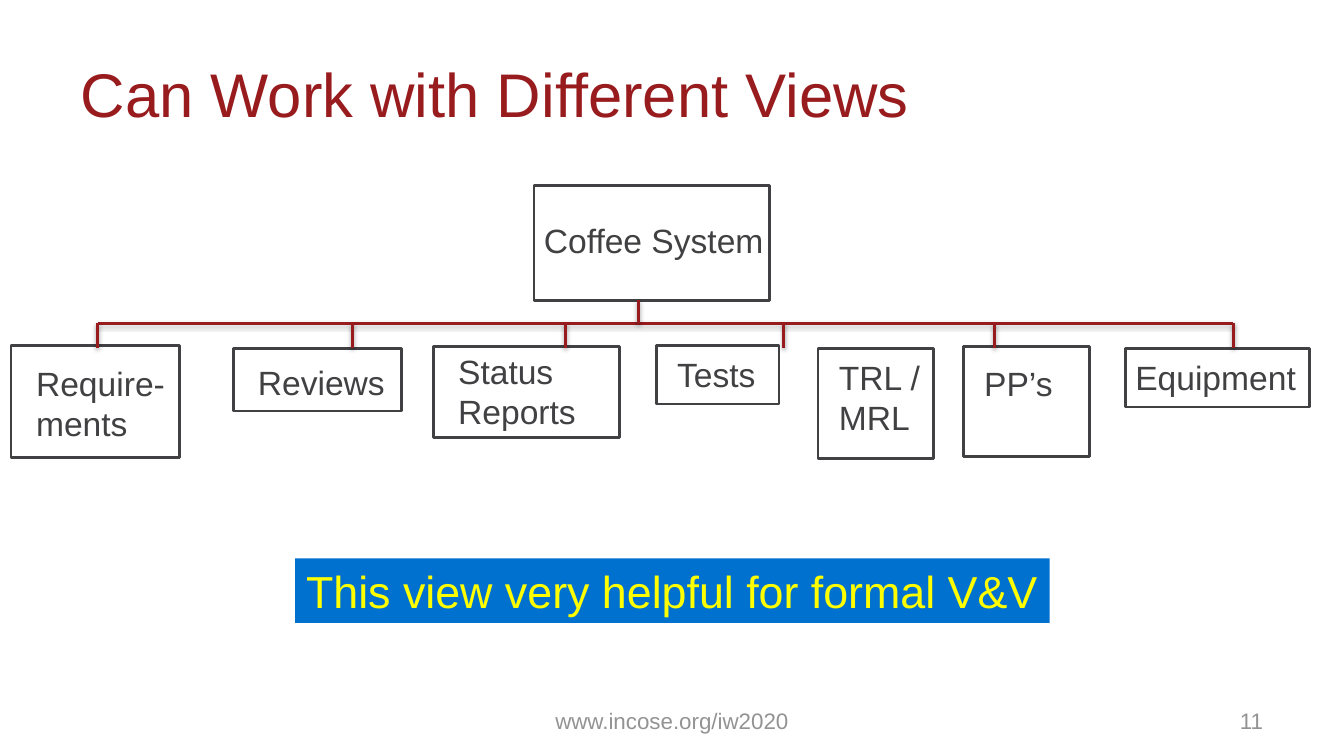
from dataclasses import dataclass

from lxml import etree
from pptx import Presentation
from pptx.dml.color import RGBColor
from pptx.enum.shapes import MSO_CONNECTOR, MSO_SHAPE
from pptx.enum.text import MSO_ANCHOR, MSO_AUTO_SIZE, PP_ALIGN
from pptx.oxml.ns import qn
from pptx.util import Cm, Pt

LEFT, CENTER, RIGHT = PP_ALIGN.LEFT, PP_ALIGN.CENTER, PP_ALIGN.RIGHT
TOP, MIDDLE = MSO_ANCHOR.TOP, MSO_ANCHOR.MIDDLE
RECT, STRAIGHT = MSO_SHAPE.RECTANGLE, MSO_CONNECTOR.STRAIGHT


@dataclass(frozen=True)
class Theme:
    font: str = "Arial"
    red: str = "981B1E"
    ink: str = "414042"
    gray: str = "939393"
    blue: str = "0071CE"
    yellow: str = "FFFF00"
    title: int = 44
    banner: int = 32
    body: int = 24
    foot: int = 16
    line: int = 2


THEME = Theme()
INSET = (0.25, 0.13)
WIDE_INSET = (0.34, 0.17)

# Label, box (x, y, w, h), text (dx, dy, w), lines of text, stem x
BRANCHES = [
    ("Require- ments", (0, 4.04, 4.24, 2.82), (0.38, 0.3, 3.89), 2, 2.18),
    ("Reviews", (5.61, 4.12, 4.24, 1.57), (0.36, 0.2, 5.59), 1, 8.61),
    ("Status Reports", (10.64, 4.07, 4.7, 2.29), (0.38, -0.03, 3.53), 2, 13.97),
    ("Tests", (16.26, 4.04, 3.1, 1.47), (0.28, 0.08, 2.51), 1, 19.48),
    ("TRL / MRL", (20.34, 4.12, 2.92, 2.77), (0.28, 0.07, 2.82), 2, None),
    ("PP’s", (24, 4.07, 3.18, 2.77), (0.28, 0.28, 2.92), 1, 24.79),
    ("Equipment", (28.09, 4.12, 4.65, 1.47), (0, 0.07, 4.65), 1, 30.81),
]


def write(shape, text, size, color, align=LEFT, anchor=TOP, inset=INSET, wrap=True):
    frame = shape.text_frame
    side, edge = Cm(inset[0]), Cm(inset[1])
    form = {
        "auto_size": MSO_AUTO_SIZE.NONE, "word_wrap": wrap,
        "vertical_anchor": anchor, "margin_left": side, "margin_right": side,
        "margin_top": edge, "margin_bottom": edge,
    }
    for name, value in form.items():
        setattr(frame, name, value)
    frame.text = text
    para = frame.paragraphs[0]
    para.alignment = align
    for name, value in {"name": THEME.font, "size": Pt(size)}.items():
        setattr(para.font, name, value)
    para.font.color.rgb = RGBColor.from_string(color)


def label(slide, box, *args, **form):
    write(slide.shapes.add_textbox(*map(Cm, box)), *args, **form)


def frame_box(slide, box):
    shape = slide.shapes.add_shape(RECT, *map(Cm, box))
    shape.shadow.inherit = False
    shape.fill.background()
    shape.line.color.rgb = RGBColor.from_string(THEME.ink)
    shape.line.width = Pt(THEME.line)


def link(slide, x1, y1, x2, y2):
    line = slide.shapes.add_connector(STRAIGHT, *map(Cm, (x1, y1, x2, y2)))
    line.line.color.rgb = RGBColor.from_string(THEME.red)
    line.line.width = Pt(THEME.line)
    # Soft shadow straight below
    effects = etree.SubElement(line._element.spPr, qn("a:effectLst"))
    shadow = etree.SubElement(
        effects, qn("a:outerShdw"), blurRad=str(Pt(3.1)), dist=str(Pt(1.6)),
        dir="5400000", rotWithShape="0")
    color = etree.SubElement(shadow, qn("a:srgbClr"), val="000000")
    etree.SubElement(color, qn("a:alpha"), val="38000")


def add_title(slide, box):
    title = slide.shapes.title
    for name, value in zip(("left", "top", "width", "height"), box):
        setattr(title, name, Cm(value))
    write(title, "Can Work with Different Views", THEME.title, THEME.red,
          anchor=MIDDLE, inset=WIDE_INSET)


def add_tree(slide, left, top):
    def node(text, box, shift, lines):
        x, y, w, h = box
        dx, dy, wide = shift
        x, y = left + x, top + y
        frame_box(slide, (x, y, w, h))
        label(slide, (x + dx, y + dy, wide, 0.25 + 1.03 * lines),
              text, THEME.body, THEME.ink, wrap=lines > 1)

    # Boxes
    node("Coffee System", (13.18, 0, 5.94, 2.9), (0, 0.74, 6.3), 1)
    for text, box, shift, lines, _ in BRANCHES:
        node(text, box, shift, lines)

    # Bar, trunk and stems
    stems = [left + branch[-1] for branch in BRANCHES if branch[-1] is not None]
    bar, trunk = top + 3.48, left + 15.82
    link(slide, stems[0], bar, stems[-1], bar)
    link(slide, trunk, top + 2.9, trunk, bar)
    for x in stems:
        link(slide, x, bar, x, top + 4.09)


def add_banner(slide, box):
    banner = slide.shapes.add_shape(RECT, *map(Cm, box))
    banner.shadow.inherit = False
    banner.fill.solid()
    banner.fill.fore_color.rgb = RGBColor.from_string(THEME.blue)
    banner.line.fill.background()
    write(banner, "This view very helpful for formal V&V", THEME.banner,
          THEME.yellow, align=CENTER, wrap=False)


def add_footer(slide, top, height):
    for text, x, wide, align in (("www.incose.org/iw2020", 11.58, 10.72, CENTER),
                                 ("11", 24.28, 7.9, RIGHT)):
        label(slide, (x, top, wide, height), text, THEME.foot, THEME.gray,
              align=align, anchor=MIDDLE, inset=WIDE_INSET)


def main():
    deck = Presentation()
    deck.slide_width, deck.slide_height = Cm(33.88), Cm(19.05)
    slide = deck.slides.add_slide(deck.slide_layouts.get_by_name("Title Only"))
    add_title(slide, (1.7, 0.76, 30.5, 3.18))
    add_tree(slide, 0.28, 4.67)
    add_banner(slide, (7.44, 14.07, 19.02, 1.63))
    add_footer(slide, 17.65, 1.02)
    deck.save("out.pptx")


if __name__ == "__main__":
    main()
